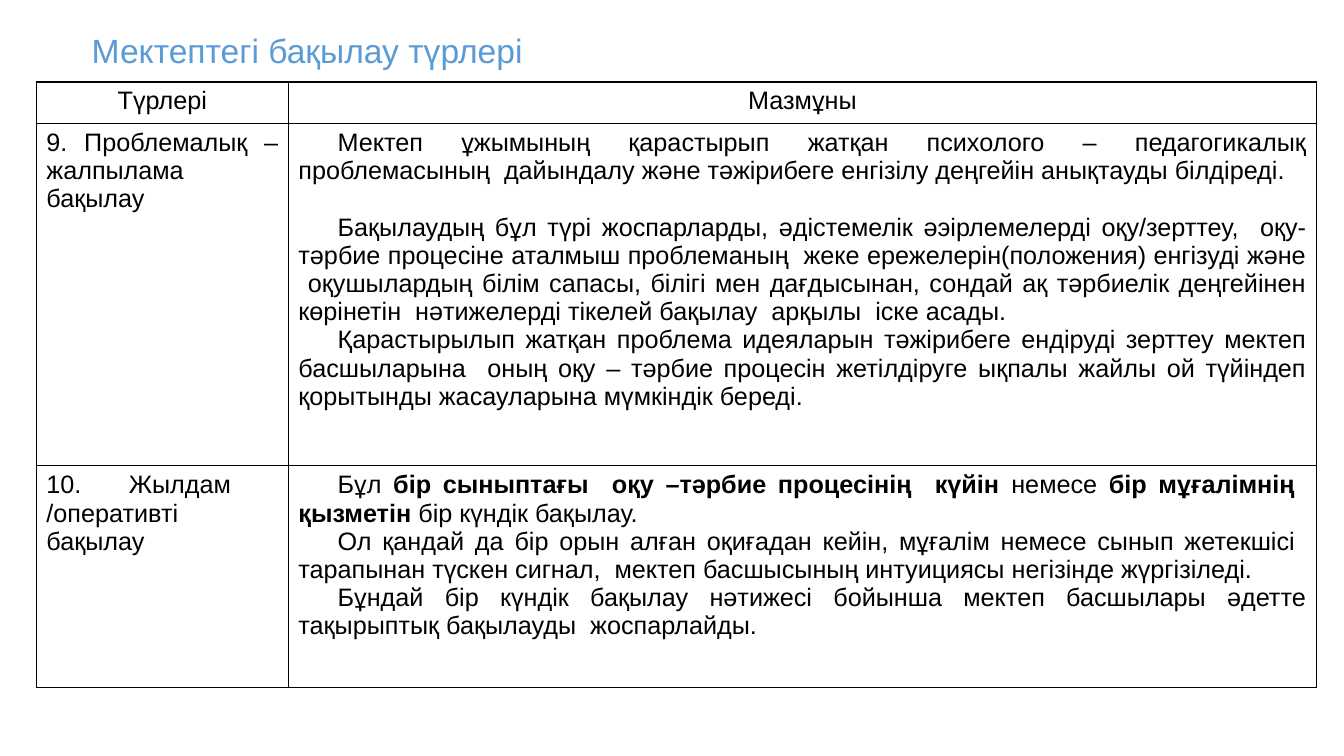
"""Builds a slide with a table of the kinds of school inspection."""
from dataclasses import dataclass

from lxml import etree
from pptx import Presentation
from pptx.dml.color import RGBColor
from pptx.enum.text import MSO_ANCHOR, PP_ALIGN
from pptx.oxml.ns import qn
from pptx.util import Pt

LEFT, CENTER, JUSTIFY = PP_ALIGN.LEFT, PP_ALIGN.CENTER, PP_ALIGN.JUSTIFY
MIDDLE, TOP = MSO_ANCHOR.MIDDLE, MSO_ANCHOR.TOP
TITLE_ONLY = 5
BORDER_TAGS = ("a:lnL", "a:lnR", "a:lnT", "a:lnB")


@dataclass(frozen=True)
class Theme:
    font: str = "Arial"
    title_color: str = "5B9BD5"
    text_color: str = "000000"
    border_color: str = "000000"
    cell_color: str = "FFFFFF"
    title_size: float = 24
    body_size: float = 18
    border_width: float = 1
    first_line_indent: float = 28
    section_gap: float = 20.4


@dataclass(frozen=True)
class Block:
    runs: tuple
    space_before: float = 0


THEME = Theme()
COLUMN_WIDTHS = (180, 734.4)
ROW_HEIGHTS = (29.5, 244.8, 158.4)
HEADINGS = ("Түрлері", "Мазмұны")
INSPECTIONS = (
    ("9. Проблемалық –жалпылама бақылау", (
        Block(("Мектеп ұжымының қарастырып жатқан психолого – педагогикалық "
               "проблемасының  дайындалу және тәжірибеге енгізілу деңгейін "
               "анықтауды білдіреді.",)),
        Block(("Бақылаудың бұл түрі жоспарларды, әдістемелік әэірлемелерді "
               "оқу/зерттеу,  оқу-тәрбие процесіне аталмыш проблеманың  жеке "
               "ережелерін(положения) енгізуді және  оқушылардың білім сапасы, "
               "білігі мен дағдысынан, сондай ақ тәрбиелік деңгейінен көрінетін  "
               "нәтижелерді тікелей бақылау  арқылы  іске асады.",),
              THEME.section_gap),
        Block(("Қарастырылып жатқан проблема идеяларын тәжірибеге ендіруді "
               "зерттеу мектеп басшыларына  оның оқу – тәрбие процесін "
               "жетілдіруге ықпалы жайлы ой түйіндеп қорытынды жасауларына "
               "мүмкіндік береді.",)),
    )),
    ("10. Жылдам  /оперативті бақылау", (
        Block(("Бұл ", "бір сыныптағы  оқу –тәрбие процесінің  күйін ",
               "немесе ", "бір мұғалімнің  қызметін", " бір күндік бақылау.")),
        Block(("Ол қандай да бір орын алған оқиғадан кейін, мұғалім немесе "
               "сынып жетекшісі  тарапынан түскен сигнал,  мектеп басшысының "
               "интуициясы негізінде жүргізіледі.",)),
        Block(("Бұндай бір күндік бақылау нәтижесі бойынша мектеп басшылары "
               "әдетте тақырыптық бақылауды  жоспарлайды.",)),
    )),
)


def write_text(paragraph, runs, size, color, font, align, indent=0,
               space_before=0, line_spacing=1.0):
    """Write runs into a paragraph, every second one bold."""
    paragraph.alignment = align
    paragraph.space_before = Pt(space_before)
    paragraph.line_spacing = line_spacing
    if indent:
        properties = paragraph._p.get_or_add_pPr()
        properties.set("marL", "0")
        properties.set("indent", str(Pt(indent)))
    for position, text in enumerate(runs):
        run = paragraph.add_run()
        run.text = text
        run.font.name = font
        run.font.size = Pt(size)
        run.font.bold = position % 2 == 1
        run.font.color.rgb = RGBColor.from_string(color)


class SlideBuilder:
    """Hold the theme and the current slide."""

    def __init__(self, presentation, theme):
        """Add a title-only slide to the presentation."""
        self.theme = theme
        self.slide = presentation.slides.add_slide(
            presentation.slide_layouts[TITLE_ONLY])

    def title(self, text, left, top, width, height):
        """Place and format the title."""
        shape = self.slide.shapes.title
        shape.left, shape.top = Pt(left), Pt(top)
        shape.width, shape.height = Pt(width), Pt(height)
        shape.text_frame.vertical_anchor = MIDDLE
        write_text(shape.text_frame.paragraphs[0], (text,),
                   self.theme.title_size, self.theme.title_color,
                   self.theme.font, LEFT, line_spacing=0.9)

    def table(self, left, top, column_widths, row_heights):
        """Add an empty table of the given column widths and row heights."""
        table = self.slide.shapes.add_table(
            len(row_heights), len(column_widths), Pt(left), Pt(top),
            Pt(sum(column_widths)), Pt(sum(row_heights))).table
        table.first_row = table.horz_banding = False
        for column, width in zip(table.columns, column_widths):
            column.width = Pt(width)
        for row, height in zip(table.rows, row_heights):
            row.height = Pt(height)
        return table

    def cell(self, cell, blocks, align, indent=0):
        """Fill a cell with paragraphs and draw its borders."""
        cell.vertical_anchor = TOP
        self.borders(cell)
        cell.fill.solid()
        cell.fill.fore_color.rgb = RGBColor.from_string(self.theme.cell_color)
        frame = cell.text_frame
        for position, block in enumerate(blocks):
            paragraph = frame.add_paragraph() if position else frame.paragraphs[0]
            write_text(paragraph, block.runs, self.theme.body_size,
                       self.theme.text_color, self.theme.font, align,
                       indent=indent, space_before=block.space_before)

    def borders(self, cell):
        """Draw a solid line on each side of a cell."""
        properties = cell._tc.get_or_add_tcPr()
        for tag in BORDER_TAGS:
            line = etree.SubElement(properties, qn(tag),
                                    w=str(Pt(self.theme.border_width)))
            fill = etree.SubElement(line, qn("a:solidFill"))
            etree.SubElement(fill, qn("a:srgbClr"), val=self.theme.border_color)


def main():
    """Build and save the slide."""
    presentation = Presentation()
    presentation.slide_width, presentation.slide_height = Pt(960), Pt(540)
    builder = SlideBuilder(presentation, THEME)
    builder.title("Мектептегі бақылау түрлері", 58.3, 17.3, 828, 41)
    table = builder.table(26, 58.5, COLUMN_WIDTHS, ROW_HEIGHTS)
    for column, heading in enumerate(HEADINGS):
        builder.cell(table.cell(0, column), (Block((heading,)),), CENTER)
    for row, (kind, blocks) in enumerate(INSPECTIONS, start=1):
        builder.cell(table.cell(row, 0), (Block((kind,)),), JUSTIFY)
        builder.cell(table.cell(row, 1), blocks, JUSTIFY,
                     indent=THEME.first_line_indent)
    presentation.save("out.pptx")


if __name__ == "__main__":
    main()
